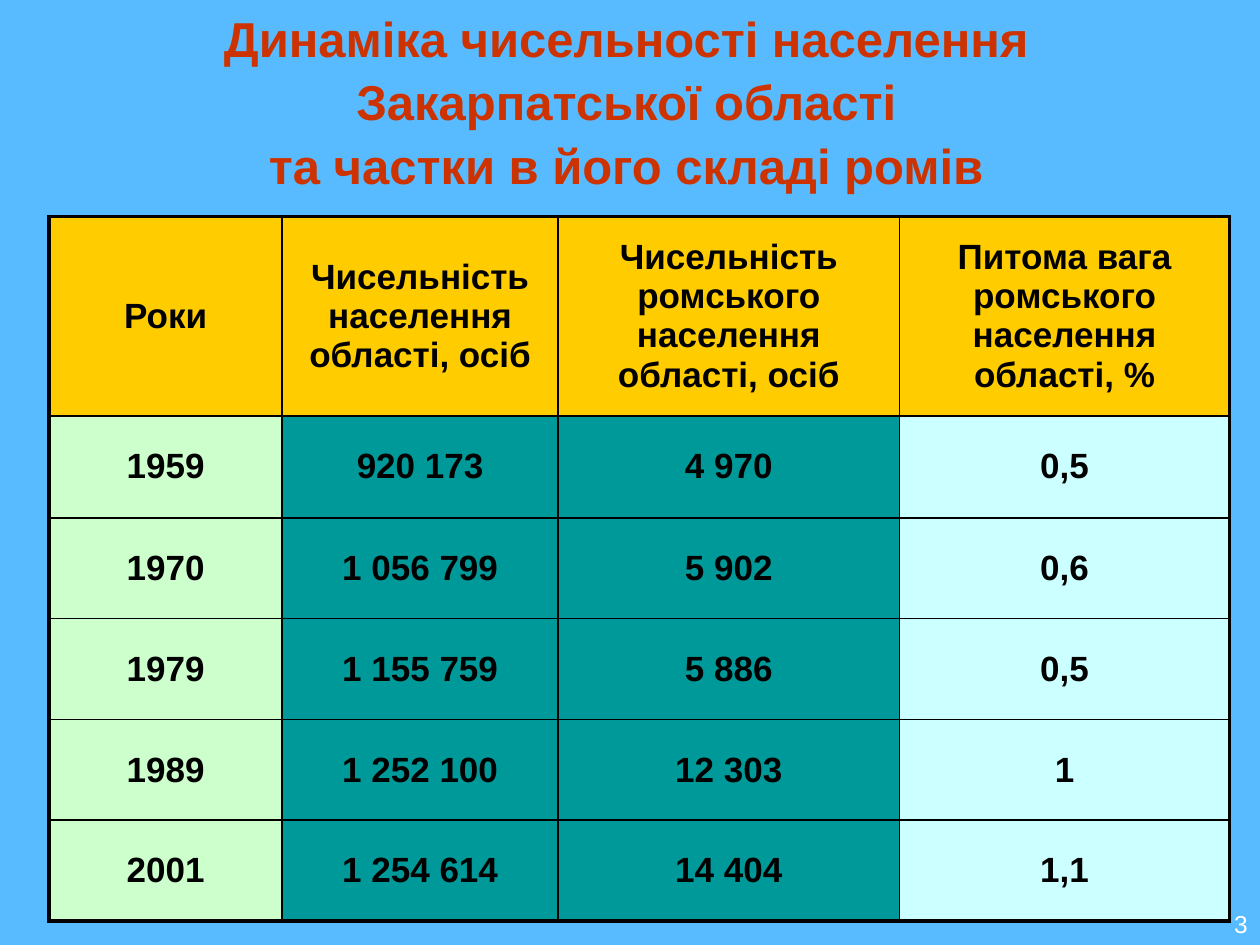
from dataclasses import dataclass
from lxml import etree
from pptx import Presentation, util as u
from pptx.dml.color import RGBColor
from pptx.enum import text as t
from pptx.oxml.ns import qn


@dataclass(frozen=True)
class Theme:
    """Colours, type sizes and line widths of the slide."""
    font: str = "Arial"
    back: str = "58BBFF"
    title: str = "CC3300"
    ink: str = "000000"
    page: str = "FFFFFF"
    head: str = "FFCC00"
    body: tuple[str, ...] = ("CCFFCC", "009999", "009999", "CCFFFF")
    big: float = 28
    mid: float = 20
    small: float = 14
    edge: float = 2.25
    rule: float = 1.5
    thin: float = 1


@dataclass(frozen=True)
class Box:
    """A place on the slide, in points."""
    left: float
    top: float
    width: float
    height: float

    def emu(self) -> list[u.Pt]:
        """Return the four lengths for python-pptx."""
        return [u.Pt(v) for v in (self.left, self.top, self.width, self.height)]


LOOK = Theme()
WIDTHS = (133.2, 157.68, 195.12, 188.64)
HEIGHTS = (113.76, 58.32, 57.6, 57.6, 57.6, 57.6)
ROWS = (
    ("Роки", "Чисельність населення області, осіб",
     "Чисельність ромського населення області, осіб",
     "Питома вага ромського населення області, %"),
    ("1959", "920 173", "4 970", "0,5"),
    ("1970", "1 056 799", "5 902", "0,6"),
    ("1979", "1 155 759", "5 886", "0,5"),
    ("1989", "1 252 100", "12 303", "1"),
    ("2001", "1 254 614", "14 404", "1,1"),
)


def write(frame, words: str, *, size: float, color: str, bold: bool = False,
          align=t.PP_ALIGN.CENTER, space: float | None = None) -> None:
    """Fill a text frame with one formatted paragraph."""
    frame.word_wrap = True
    para = frame.paragraphs[0]
    para.text = words
    para.alignment = align
    para.line_spacing = space
    for run in para.runs:
        font = run.font
        font.name, font.size, font.bold = LOOK.font, u.Pt(size), bold
        font.color.rgb = RGBColor.from_string(color)


def label(slide, box: Box, words: str, anchor, **form) -> None:
    """Add a text box."""
    frame = slide.shapes.add_textbox(*box.emu()).text_frame
    frame.vertical_anchor = anchor
    write(frame, words, **form)


def border(cell, sides: dict[str, float]) -> None:
    """Draw the sides of a cell ahead of its fill."""
    props = cell._tc.get_or_add_tcPr()
    for spot, (side, width) in enumerate(sides.items()):
        line = etree.Element(qn(f"a:ln{side}"), w=str(int(u.Pt(width))))
        fill = etree.SubElement(line, qn("a:solidFill"))
        etree.SubElement(fill, qn("a:srgbClr"), val=LOOK.ink)
        props.insert(spot, line)


def grid(slide, box: Box) -> None:
    """Add the population table."""
    table = slide.shapes.add_table(len(ROWS), len(WIDTHS), *box.emu()).table
    for col, width in zip(table.columns, WIDTHS):
        col.width = u.Pt(width)
    for row, height in zip(table.rows, HEIGHTS):
        row.height = u.Pt(height)
    tall = {0: LOOK.edge, 1: LOOK.rule, len(ROWS): LOOK.edge}
    wide = {0: LOOK.edge, len(WIDTHS): LOOK.edge}
    for r, row in enumerate(ROWS):
        for c, words in enumerate(row):
            cell = table.cell(r, c)
            cell.vertical_anchor = t.MSO_ANCHOR.MIDDLE
            cell.fill.solid()
            tint = LOOK.body[c] if r else LOOK.head
            cell.fill.fore_color.rgb = RGBColor.from_string(tint)
            write(cell.text_frame, words, size=LOOK.mid, color=LOOK.ink, bold=True)
            border(cell, {"L": wide.get(c, LOOK.thin), "R": wide.get(c + 1, LOOK.thin),
                          "T": tall.get(r, LOOK.thin), "B": tall.get(r + 1, LOOK.thin)})


def main() -> None:
    """Build and save the slide."""
    deck = Presentation()
    deck.slide_width, deck.slide_height = u.Pt(720), u.Pt(540)
    slide = deck.slides.add_slide(deck.slide_layouts[6])
    back = slide.background.fill
    back.solid()
    back.fore_color.rgb = RGBColor.from_string(LOOK.back)
    label(slide, Box(33.84, 11.52, 648, 90),
          "Динаміка чисельності населення Закарпатської області\vта частки в його складі ромів",
          t.MSO_ANCHOR.MIDDLE, size=LOOK.big, color=LOOK.title, bold=True, space=1.08)
    grid(slide, Box(28.08, 123.84, sum(WIDTHS), sum(HEIGHTS)))
    label(slide, Box(697.68, 515.52, 22.32, 24.48), "3", t.MSO_ANCHOR.BOTTOM,
          size=LOOK.small, color=LOOK.page, align=t.PP_ALIGN.RIGHT)
    deck.save("out.pptx")


if __name__ == "__main__":
    main()
